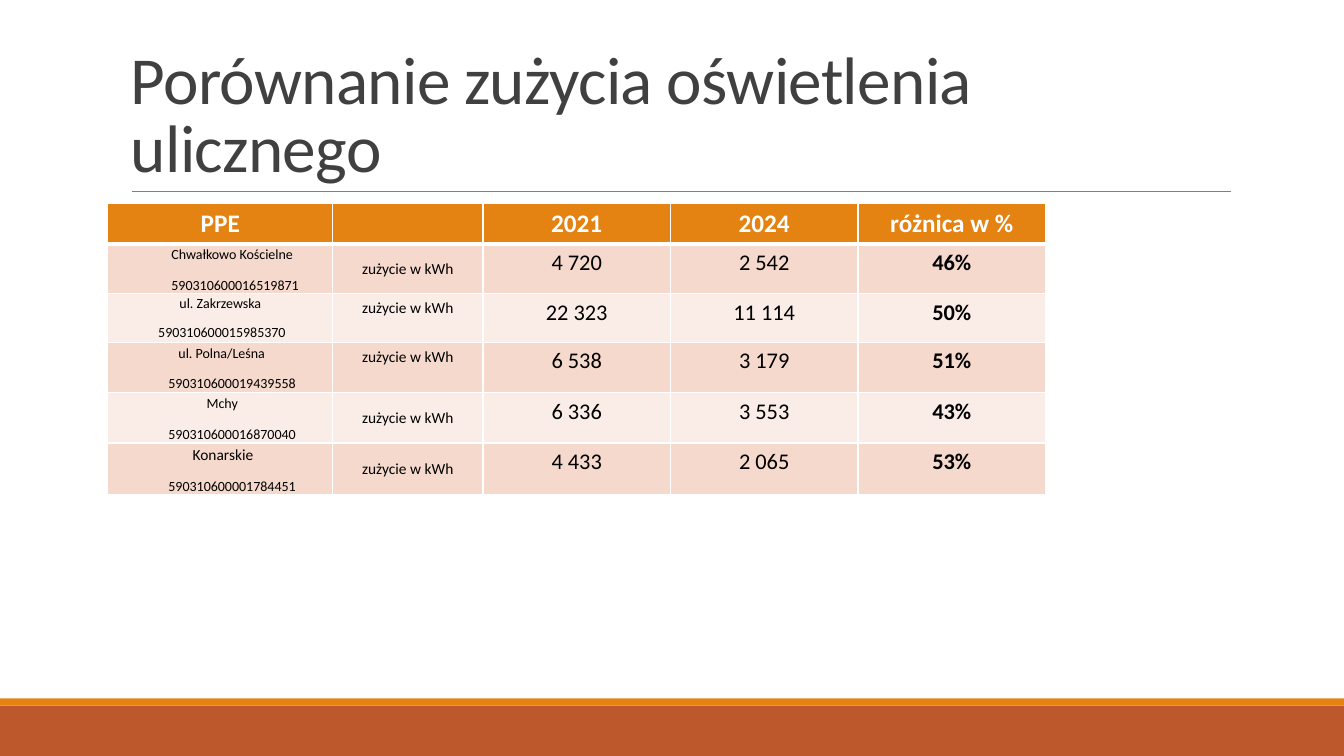
import dataclasses
import typing

import lxml.etree
import pptx
import pptx.dml.color
import pptx.enum.shapes
import pptx.enum.text
import pptx.oxml.ns
import pptx.util

Inches = pptx.util.Inches
Pt = pptx.util.Pt
RGB = pptx.dml.color.RGBColor
qn = pptx.oxml.ns.qn
ALIGN = pptx.enum.text.PP_ALIGN
ANCHOR = pptx.enum.text.MSO_ANCHOR


@dataclasses.dataclass(frozen=True)
class Theme:
    font: str = "Calibri"
    orange: str = "E48312"
    rust: str = "BD582C"
    bands: tuple[str, str] = ("F5D9CC", "FAEDE7")
    title: str = "404040"
    rule: str = "808080"
    white: str = "FFFFFF"
    black: str = "000000"
    title_size: int = 48
    header_size: int = 18
    value_size: int = 16
    unit_size: int = 11
    point_size: int = 10


THEME = Theme()


@dataclasses.dataclass(frozen=True)
class Line:
    text: str
    size: int
    color: str = THEME.black
    bold: bool = False
    align: ALIGN = ALIGN.CENTER
    indent: float = 0
    spacing: float = 1.0
    after: int = 0


@dataclasses.dataclass(frozen=True)
class MeterPoint:
    name: str
    number: str
    used_2021: str
    used_2024: str
    change: str
    height: float
    name_indent: float = 0
    number_indent: float = 0.5
    name_size: int = THEME.point_size
    align: ALIGN = ALIGN.LEFT
    spacing: float = 1.15
    unit_anchor: ANCHOR = ANCHOR.MIDDLE


HEADERS = ("PPE", "", "2021", "2024", "różnica w %")
COLUMN_WIDTHS = (2.23, 1.49, 1.86, 1.86, 1.86)
HEADER_HEIGHT = 0.39
UNIT = "zużycie w kWh"
POINTS = (
    MeterPoint("Chwałkowo Kościelne", "590310600016519871", "4 720", "2 542", "46%",
               0.49, name_indent=0.53, number_indent=0.53),
    MeterPoint("ul. Zakrzewska", "590310600015985370", "22 323", "11 114", "50%",
               0.48, number_indent=0.03, align=ALIGN.CENTER, spacing=1.06,
               unit_anchor=ANCHOR.TOP),
    MeterPoint("ul. Polna/Leśna", "590310600019439558", "6 538", "3 179", "51%",
               0.5, name_indent=0.6, unit_anchor=ANCHOR.TOP),
    MeterPoint("Mchy", "590310600016870040", "6 336", "3 553", "43%",
               0.5, name_indent=0.88),
    MeterPoint("Konarskie", "590310600001784451", "4 433", "2 065", "53%",
               0.51, name_indent=0.74, name_size=THEME.unit_size),
)


def set_all(obj: typing.Any, values: dict[str, typing.Any]) -> None:
    for name, value in values.items():
        setattr(obj, name, value)


def write_lines(tf: typing.Any, lines: typing.Sequence[Line]) -> None:
    for i, line in enumerate(lines):
        p = tf.add_paragraph() if i else tf.paragraphs[0]
        set_all(p, {"alignment": line.align, "line_spacing": line.spacing,
                    "space_after": Pt(line.after)})
        if line.indent:
            p._p.get_or_add_pPr().set("marL", str(Inches(line.indent)))
        r = p.add_run()
        r.text = line.text
        set_all(r.font, {"name": THEME.font, "size": Pt(line.size), "bold": line.bold})
        r.font.color.rgb = RGB.from_string(line.color)


def add_bar(slide: typing.Any, top: float, height: float, color: str) -> None:
    sp = slide.shapes.add_shape(pptx.enum.shapes.MSO_SHAPE.RECTANGLE, 0, Inches(top),
                                Inches(13.33), Inches(height))
    sp.shadow.inherit = False
    sp.fill.solid()
    sp.fill.fore_color.rgb = RGB.from_string(color)
    sp.line.fill.background()


def add_rule(slide: typing.Any) -> None:
    line = slide.shapes.add_connector(pptx.enum.shapes.MSO_CONNECTOR.STRAIGHT,
                                      Inches(1.31), Inches(1.9), Inches(12.21), Inches(1.9))
    line.line.color.rgb = RGB.from_string(THEME.rule)
    line.line.width = Pt(0.5)
    lxml.etree.SubElement(line._element.spPr, qn("a:effectLst"))


def add_title(slide: typing.Any, text: str) -> None:
    sp = slide.shapes.add_textbox(Inches(1.2), Inches(0.31), Inches(11), Inches(1.59))
    tf = sp.text_frame
    set_all(tf, {"word_wrap": True, "vertical_anchor": ANCHOR.BOTTOM})
    write_lines(tf, [Line(text, THEME.title_size, THEME.title, align=ALIGN.LEFT, spacing=0.85)])
    tf.paragraphs[0].runs[0].font._element.set("spc", "-50")


def style_cell(cell: typing.Any, fill: str, widths: dict[str, float]) -> None:
    """Give the cell white borders, keyed by side letter, and then its fill."""
    tc_pr = cell._tc.get_or_add_tcPr()
    for side, width in widths.items():
        ln = lxml.etree.SubElement(tc_pr, qn(f"a:ln{side}"), w=str(Pt(width)))
        solid = lxml.etree.SubElement(ln, qn("a:solidFill"))
        lxml.etree.SubElement(solid, qn("a:srgbClr"), val=THEME.white)
    cell.fill.solid()
    cell.fill.fore_color.rgb = RGB.from_string(fill)


def fill_point_row(cells: typing.Sequence[typing.Any], point: MeterPoint) -> None:
    place = cells[0]
    set_all(place, {"margin_top": 0, "margin_bottom": 0})
    if point.align == ALIGN.CENTER:
        place.vertical_anchor = ANCHOR.MIDDLE
    common = {"align": point.align, "spacing": point.spacing, "after": 8}
    write_lines(place.text_frame, [
        Line(point.name, point.name_size, indent=point.name_indent, **common),
        Line(point.number, THEME.point_size, indent=point.number_indent, **common),
    ])
    cells[1].vertical_anchor = point.unit_anchor
    write_lines(cells[1].text_frame, [Line(UNIT, THEME.unit_size)])
    values = (point.used_2021, point.used_2024, point.change)
    for cell, value in zip(cells[2:], values):
        write_lines(cell.text_frame,
                    [Line(value, THEME.value_size, bold=value == point.change)])


def add_usage_table(slide: typing.Any) -> None:
    heights = (HEADER_HEIGHT, *(point.height for point in POINTS))
    frame = slide.shapes.add_table(len(heights), len(HEADERS), Inches(1.07), Inches(2.02),
                                   Inches(sum(COLUMN_WIDTHS)), Inches(sum(heights)))
    table = frame.table
    for column, width in zip(table.columns, COLUMN_WIDTHS):
        column.width = Inches(width)
    for i, (row, height) in enumerate(zip(table.rows, heights)):
        row.height = Inches(height)
        cells = list(row.cells)
        fill = THEME.bands[(i - 1) % 2] if i else THEME.orange
        widths = {"L": 1, "R": 1, "T": 3 if i == 1 else 1, "B": 1 if i else 3}
        for cell in cells:
            style_cell(cell, fill, widths)
        if i:
            fill_point_row(cells, POINTS[i - 1])
            continue
        for cell, header in zip(cells, HEADERS):
            if header:
                write_lines(cell.text_frame,
                            [Line(header, THEME.header_size, THEME.white, bold=True)])


def main() -> None:
    prs = pptx.Presentation()
    set_all(prs, {"slide_width": Inches(13.33), "slide_height": Inches(7.5)})
    slide = prs.slides.add_slide(prs.slide_layouts[6])
    add_bar(slide, 7, 0.5, THEME.rust)
    add_bar(slide, 6.93, 0.07, THEME.orange)
    add_rule(slide)
    add_title(slide, "Porównanie zużycia oświetlenia ulicznego")
    add_usage_table(slide)
    prs.save("out.pptx")


if __name__ == "__main__":
    main()
